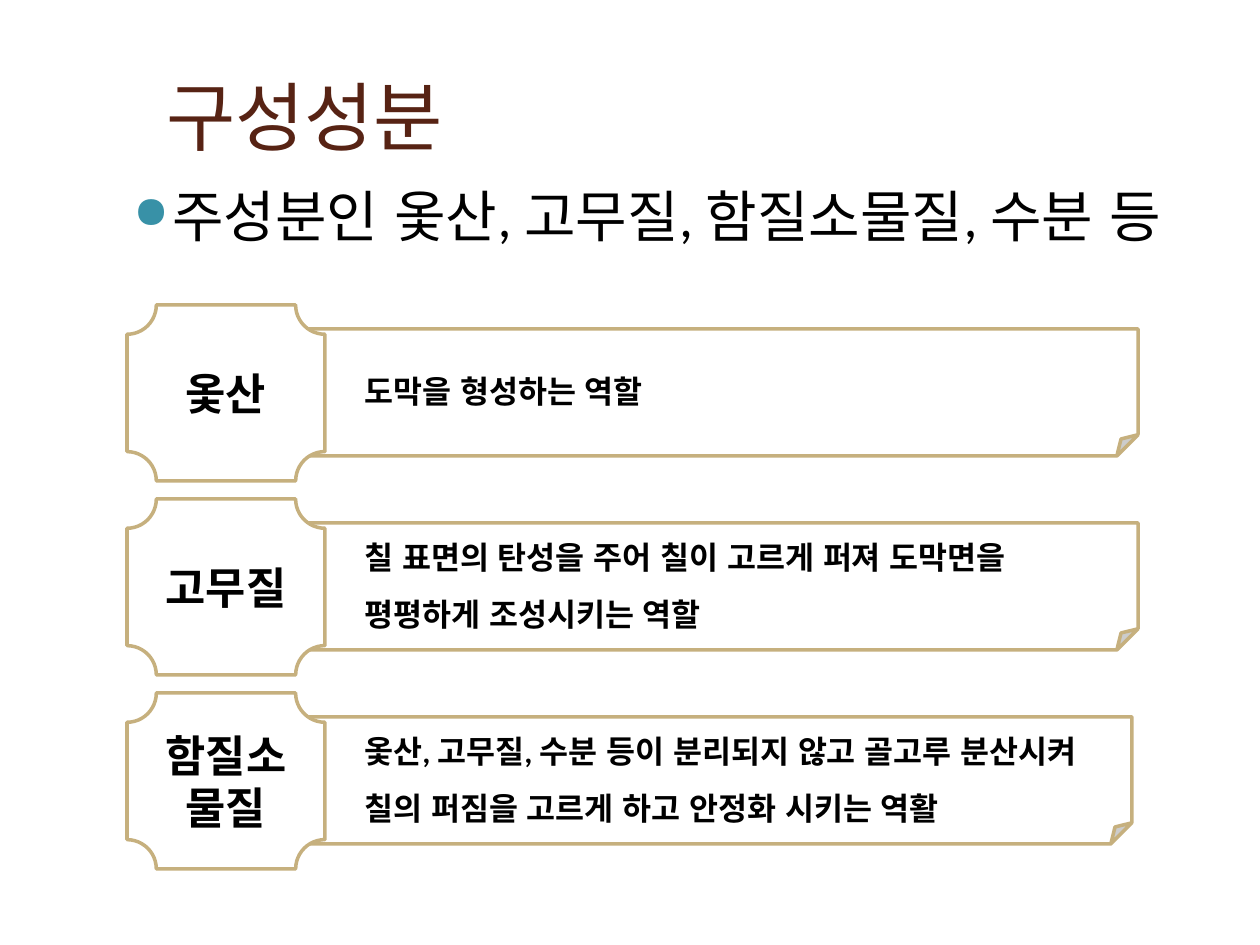
from dataclasses import dataclass

from lxml.etree import SubElement
from pptx import Presentation
from pptx.dml.color import RGBColor
from pptx.enum.lang import MSO_LANGUAGE_ID as LANG
from pptx.enum.shapes import MSO_SHAPE as SHAPE
from pptx.enum.text import MSO_ANCHOR as ANCHOR, PP_ALIGN as ALIGN
from pptx.oxml.ns import qn
from pptx.util import Emu, Pt

EMU_PER_PX = 914400 / 126
COLORS = {
    "title": "572314",
    "text": "000000",
    "bullet": "3891A7",
    "fill": "FFFFFF",
    "line": "C6B07E",
}
FONT = "Calibri"
ROW_TOP, ROW_PITCH = 305, 194
LABEL_X, LABEL_W, LABEL_H = 127, 198, 176
NOTE_X, NOTE_H, NOTE_DROP = 289, 127, 24


@dataclass(frozen=True)
class Component:
    name: str
    role: str
    note_w: int = 849


COMPONENTS = [
    Component("옻산", "도막을 형성하는 역할"),
    Component("고무질", "칠 표면의 탄성을 주어 칠이 고르게 퍼져 도막면을 평평하게 조성시키는 역할"),
    Component(
        "함질소물질",
        "옻산, 고무질, 수분 등이 분리되지 않고 골고루 분산시켜 칠의 퍼짐을 고르게 하고 안정화 시키는 역활",
        843,
    ),
]


def px(n: int) -> Emu:
    return Emu(round(n * EMU_PER_PX))


def rgb(name: str) -> RGBColor:
    return RGBColor.from_string(COLORS[name])


def write(sp, text: str, *, size: int, color: str = "text", bold: bool = False,
          align=ALIGN.LEFT, anchor=ANCHOR.MIDDLE, spacing: float = 1.0,
          margin: int = 0, indent: int = 0, bullet: str = "") -> None:
    tf = sp.text_frame
    tf.word_wrap = True
    tf.vertical_anchor = anchor
    p = tf.paragraphs[0]
    p.alignment = align
    p.line_spacing = spacing
    pPr = p._p.get_or_add_pPr()
    pPr.set("marL", str(px(margin)))
    pPr.set("indent", str(px(indent)))
    if bullet:
        clr = SubElement(pPr, qn("a:buClr"))
        SubElement(clr, qn("a:srgbClr"), val=COLORS["bullet"])
        SubElement(pPr, qn("a:buSzPct"), val="80000")
        SubElement(pPr, qn("a:buChar"), char=bullet)
    r = p.add_run()
    r.text = text
    r.font.name = FONT
    r.font.size = Pt(size)
    r.font.bold = bold
    r.font.color.rgb = rgb(color)
    r.font.language_id = LANG.KOREAN


def add_text(s, x: int, y: int, w: int, h: int, text: str, **fmt) -> None:
    write(s.shapes.add_textbox(px(x), px(y), px(w), px(h)), text, **fmt)


def add_panel(s, kind, x: int, y: int, w: int, h: int, text: str, **fmt) -> None:
    sp = s.shapes.add_shape(kind, px(x), px(y), px(w), px(h))
    sp.shadow.inherit = False
    sp.fill.solid()
    sp.fill.fore_color.rgb = rgb("fill")
    sp.line.color.rgb = rgb("line")
    sp.line.width = Pt(2)
    write(sp, text, bold=True, **fmt)


def add_component(s, item: Component, y: int) -> None:
    add_panel(s, SHAPE.FOLDED_CORNER, NOTE_X, y + NOTE_DROP, item.note_w, NOTE_H,
              item.role, size=18, spacing=1.5, margin=63)
    add_panel(s, SHAPE.PLAQUE, LABEL_X, y, LABEL_W, LABEL_H,
              item.name, size=25, align=ALIGN.CENTER)


def main() -> None:
    prs = Presentation()
    prs.slide_width, prs.slide_height = px(1260), px(945)
    s = prs.slides.add_slide(prs.slide_layouts[6])
    add_text(s, 154, 37, 1033, 157, "구성성분", size=43, color="title")
    add_text(s, 110, 175, 1260, 661, "주성분인 옻산, 고무질, 함질소물질, 수분 등",
             size=32, anchor=ANCHOR.TOP, margin=50, indent=-39, bullet="●")
    for i, item in enumerate(COMPONENTS):
        add_component(s, item, ROW_TOP + i * ROW_PITCH)
    prs.save("out.pptx")


if __name__ == "__main__":
    main()
